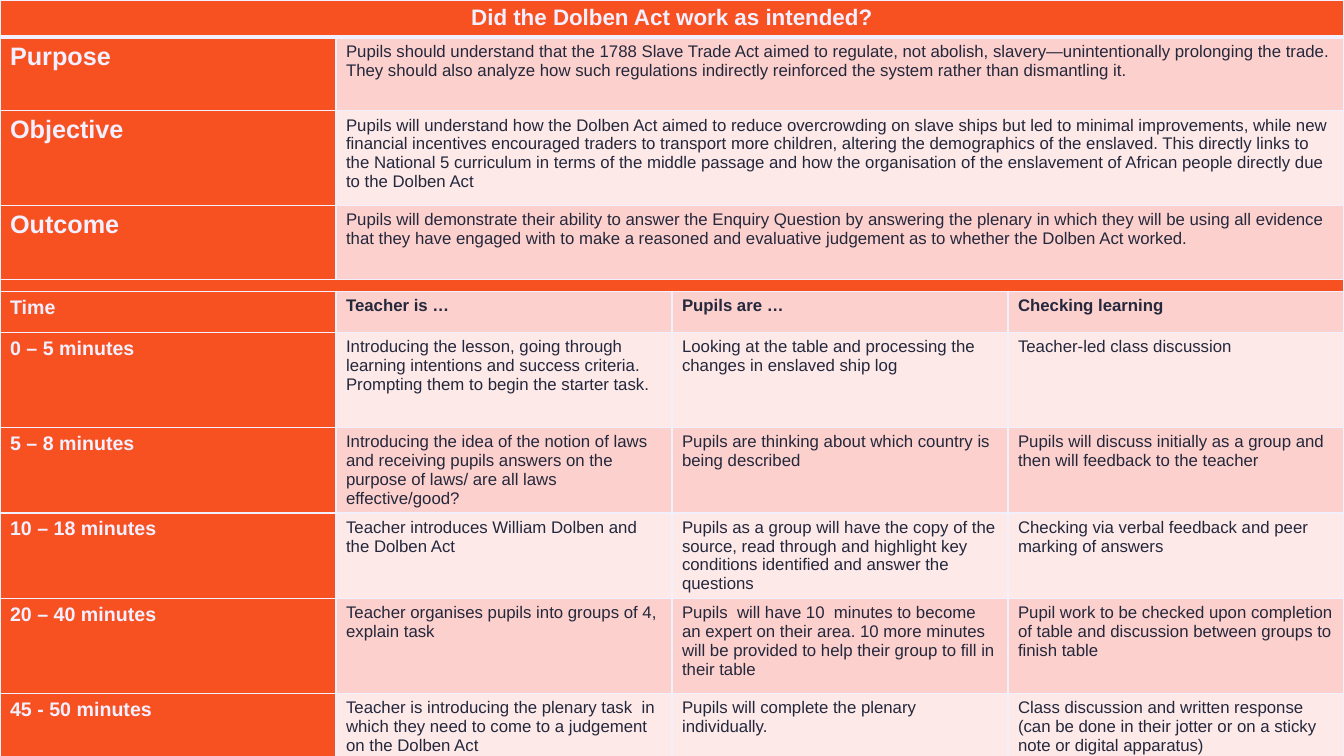
"""Build a lesson plan slide on the Dolben Act as one table."""
from lxml.etree import SubElement
from pptx import Presentation
from pptx.dml.color import RGBColor
from pptx.enum.text import PP_ALIGN as Align
from pptx.oxml.ns import qn
from pptx.util import Inches, Pt

COLORS = {"pale": "F2F0FF", "orange": "F75122", "dark": "24283C",
          "pink": "FCD0CD", "light": "FDE9E8"}

ROWS = [
    (0.37, 16, ["Did the Dolben Act work as intended?"]),
    (0.73, 18, [
        "Purpose",
        "Pupils should understand that the 1788 Slave Trade Act aimed to regulate, not abolish, "
        "slavery—unintentionally prolonging the trade. They should also analyze how such "
        "regulations indirectly reinforced the system rather than dismantling it."]),
    (0.94, 18, [
        "Objective",
        "Pupils will understand how the Dolben Act aimed to reduce overcrowding on slave ships "
        "but led to minimal improvements, while new financial incentives encouraged traders to "
        "transport more children, altering the demographics of the enslaved. This directly links "
        "to the National 5 curriculum in terms of the middle passage and how the organisation of "
        "the enslavement of African people directly due to the Dolben Act"]),
    (0.73, 18, [
        "Outcome",
        "Pupils will demonstrate their ability to answer the Enquiry Question by answering the "
        "plenary in which they will be using all evidence that they have engaged with to make a "
        "reasoned and evaluative judgement as to whether the Dolben Act worked."]),
    (0.12, 1, [""]),
    (0.41, 14, ["Time", "Teacher is …", "Pupils are …", "Checking learning"]),
    (0.94, 14, [
        "0 – 5 minutes",
        "Introducing the lesson, going through learning intentions and success criteria. "
        "Prompting them to begin the starter task.",
        "Looking at the table and processing the changes in enslaved ship log",
        "Teacher-led class discussion"]),
    (0.85, 14, [
        "5 – 8 minutes",
        "Introducing the idea of the notion of laws and receiving pupils answers on the purpose "
        "of laws/ are all laws effective/good?",
        "Pupils are thinking about which country is being described",
        "Pupils will discuss initially as a group and then will feedback to the teacher"]),
    (0.85, 14, [
        "10 – 18 minutes",
        "Teacher introduces William Dolben and the Dolben Act",
        "Pupils as a group will have the copy of the source, read through and highlight key "
        "conditions identified and answer the questions",
        "Checking via verbal feedback and peer marking of answers"]),
    (0.94, 14, [
        "20 – 40 minutes",
        "Teacher organises pupils into groups of 4, explain task",
        "Pupils  will have 10  minutes to become an expert on their area. 10 more minutes will "
        "be provided to help their group to fill in their table",
        "Pupil work to be checked upon completion of table and discussion between groups to "
        "finish table"]),
    (0.94, 14, [
        "45 - 50 minutes",
        "Teacher is introducing the plenary task  in which they need to come to a judgement on "
        "the Dolben Act",
        "Pupils will complete the plenary individually.",
        "Class discussion and written response (can be done in their jotter or on a sticky note "
        "or digital apparatus)"]),
]
TITLE, STRIP, HEAD = 0, 4, 5


def color(name):
    return RGBColor.from_string(COLORS[name])


def add_border(cell, side, width):
    line = SubElement(cell._tc.get_or_add_tcPr(), qn("a:ln" + side), w=str(Pt(width)))
    fill = SubElement(line, qn("a:solidFill"))
    SubElement(fill, qn("a:srgbClr"), val=COLORS["pale"])


deck = Presentation()
deck.slide_width, deck.slide_height = Inches(13.33), Inches(7.5)
slide = deck.slides.add_slide(deck.slide_layouts[6])
slide.background.fill.solid()
slide.background.fill.fore_color.rgb = color("pale")

total = sum(height for height, size, texts in ROWS)
table = slide.shapes.add_table(len(ROWS), 4, 0, 0, Inches(13.33), Inches(total)).table
table.horz_banding = False

for r, (height, size, texts) in enumerate(ROWS):
    table.rows[r].height = Inches(height)
    for c in range(4):
        cell = table.cell(r, c)
        label = c == 0 or len(texts) == 1
        for side in "LRTB":
            thick = (r, side) in ((TITLE, "B"), (TITLE + 1, "T"))
            add_border(cell, side, 3 if thick else 1)
        cell.fill.solid()
        cell.fill.fore_color.rgb = color("orange" if label else "pink" if r % 2 else "light")
        para = cell.text_frame.paragraphs[0]
        if r == STRIP:
            cell.margin_top = cell.margin_bottom = 0
            SubElement(para._p, qn("a:endParaRPr"), sz="100")
        elif c < len(texts):
            para.text = texts[c]
            para.alignment = Align.CENTER if r == TITLE else Align.LEFT
            para.font.name = "Arial"
            para.font.size = Pt(size if label else 12)
            para.font.bold = label or r == HEAD
            para.font.color.rgb = color("pale" if label else "dark")
    if len(texts) < 4:
        table.cell(r, len(texts) - 1).merge(table.cell(r, 3))

deck.save("out.pptx")
